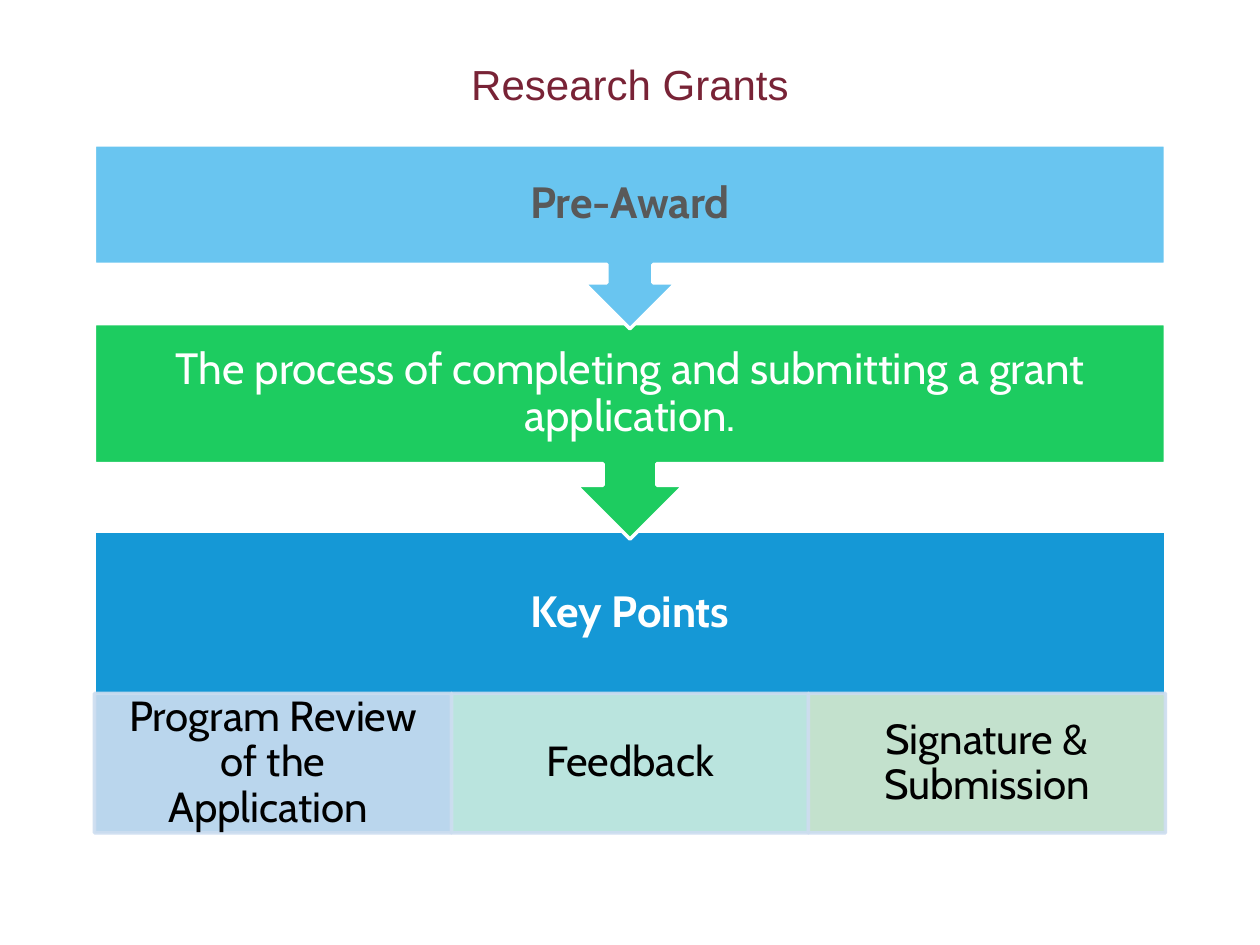
import pptx
import pptx.util
import pptx.dml.color
import pptx.enum.shapes
import pptx.enum.text
import pptx.oxml.ns
from lxml import etree

Pt = pptx.util.Pt
RGB = pptx.dml.color.RGBColor
SHAPE = pptx.enum.shapes.MSO_SHAPE
ANCHOR = pptx.enum.text.MSO_ANCHOR

# Content
TITLE = "Research Grants"
# text, top, height, fill, text colour, bold
STEPS = [
    ("Pre-Award", 82.8, 105.1, "sky", "grey", True),
    ("The process of completing and submitting a grant application.",
     185, 123.1, "green", "white", False),
]
KEY_POINTS = "Key Points"
DETAILS = [
    ("Program Review of the Application ", "pale_blue"),
    ("Feedback", "pale_teal"),
    ("Signature & Submission", "pale_green"),
]

COLORS = {
    "maroon": "782336", "white": "FFFFFF", "grey": "595959", "black": "000000",
    "sky": "69C5F0", "green": "1DCC60", "blue": "1598D6",
    "pale_blue": "CCDDF0", "pale_teal": "CDEDDF", "pale_green": "D7E9CD",
}

# Layout
LEFT, WIDTH = 54, 612
KEY_TOP, KEY_HEIGHT = 303.8, 173.5
DETAIL_TOP, DETAIL_HEIGHT = 396.2, 79.8
DETAIL_WIDTH = WIDTH / len(DETAILS)
INSET = 13.7


def color(name):
    return RGB.from_string(COLORS[name])


def write(target, text, *, size=25, font="Cabin", ink="white", bold=False,
          spacing=0.9, anchor=ANCHOR.MIDDLE, insets=(INSET,) * 4):
    """Fill a shape with centred text; insets are left, top, right, bottom."""
    frame = target.text_frame
    frame.word_wrap = True
    frame.vertical_anchor = anchor
    (frame.margin_left, frame.margin_top,
     frame.margin_right, frame.margin_bottom) = map(Pt, insets)
    paragraph = frame.paragraphs[0]
    paragraph.alignment = pptx.enum.text.PP_ALIGN.CENTER
    paragraph.line_spacing = spacing
    run = paragraph.add_run()
    run.text = text
    run.font.size, run.font.name, run.font.bold = Pt(size), font, bold
    run.font.color.rgb = color(ink)


def add_block(kind, left, top, width, height, fill, line="white", alpha=None):
    block = slide.shapes.add_shape(kind, Pt(left), Pt(top), Pt(width), Pt(height))
    block.shadow.inherit = False
    block.fill.solid()
    block.fill.fore_color.rgb = color(fill)
    block.line.color.rgb = color(line)
    block.line.width = Pt(2)
    if alpha is not None:
        properties = block.fill._xPr
        for tone in properties.iter(pptx.oxml.ns.qn("a:srgbClr")):
            etree.SubElement(tone, pptx.oxml.ns.qn("a:alpha"), val=str(alpha * 1000))
    return block


presentation = pptx.Presentation()
presentation.slide_width, presentation.slide_height = Pt(720), Pt(540)
slide = presentation.slides.add_slide(presentation.slide_layouts[6])

# Title
title = slide.shapes.add_textbox(Pt(LEFT), Pt(30), Pt(WIDTH), Pt(87))
write(title, TITLE, size=24, font="Arial", ink="maroon", spacing=1,
      anchor=ANCHOR.TOP, insets=(7.2, 3.6, 7.2, 3.6))

# Key points, with the text kept above the row of details
key_points = add_block(SHAPE.RECTANGLE, LEFT, KEY_TOP, WIDTH, KEY_HEIGHT, "blue")
write(key_points, KEY_POINTS, bold=True,
      insets=(INSET, INSET, INSET, INSET + DETAIL_HEIGHT))

# Details
for column, (text, fill) in enumerate(DETAILS):
    detail = add_block(SHAPE.RECTANGLE, LEFT + column * DETAIL_WIDTH, DETAIL_TOP,
                       DETAIL_WIDTH, DETAIL_HEIGHT, fill, line="pale_blue", alpha=90)
    write(detail, text, size=24, ink="black", insets=(INSET, 2.2, INSET, 2.2))

# Steps, last one first so that each arrow tip overlaps the block below
for text, top, height, fill, ink, bold in reversed(STEPS):
    step = add_block(SHAPE.DOWN_ARROW_CALLOUT, LEFT, top, WIDTH, height, fill)
    write(step, text, ink=ink, bold=bold)

presentation.save("out.pptx")
